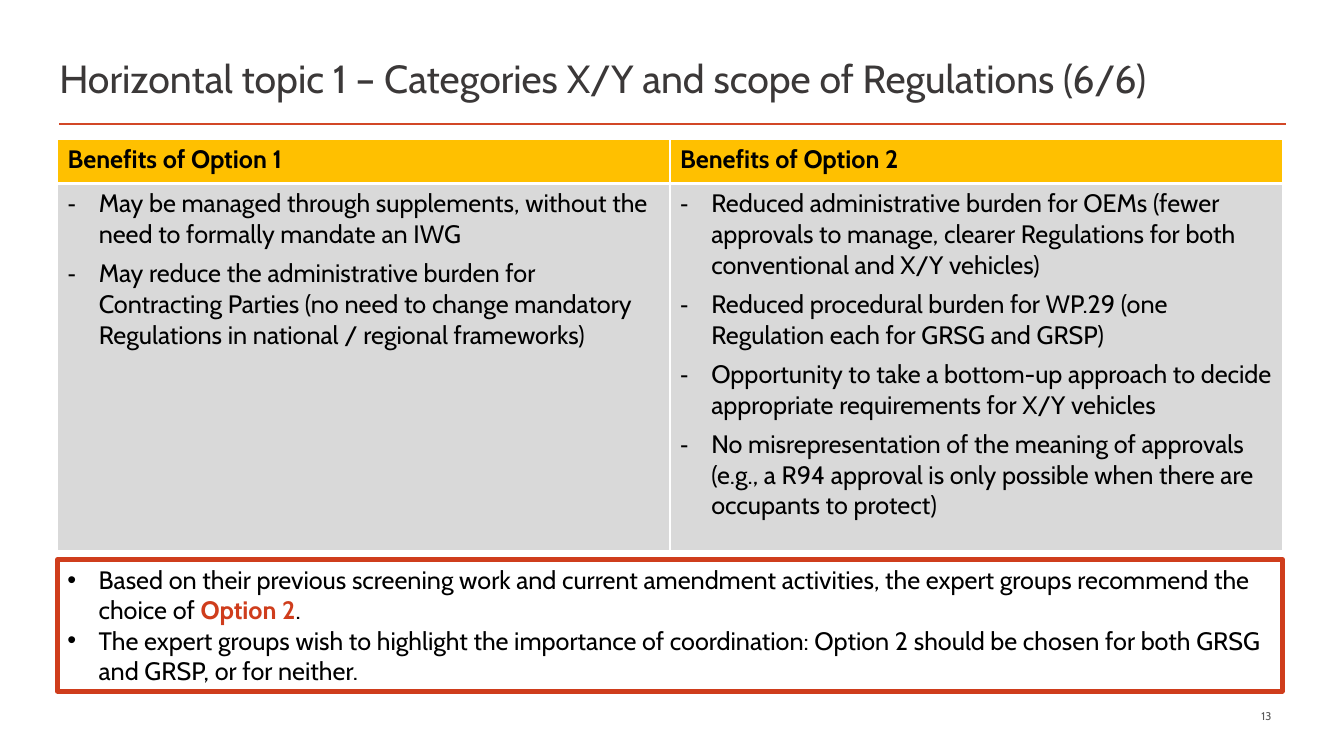
"""Build the slide that weighs the benefits of two options for Regulations."""
from dataclasses import dataclass
from typing import Any

from lxml import etree
from pptx import Presentation
from pptx import util as u
from pptx.dml.color import RGBColor
from pptx.enum import shapes, text
from pptx.oxml import ns

PX = u.Inches(1) // 100


@dataclass(frozen=True)
class Theme:
    """Colours, font and type sizes."""
    font: str = "Cabin"
    title: str = "3B3838"
    ink: str = "000000"
    muted: str = "595959"
    rule: str = "D24726"
    accent: str = "CF3D1C"
    head: str = "FFC000"
    body: str = "D9D9D9"
    white: str = "FFFFFF"
    big: int = 28
    mid: int = 18
    small: int = 8


@dataclass(frozen=True)
class Box:
    """A place on the slide in px."""
    left: int
    top: int
    width: int
    height: int

    def emu(self) -> tuple[int, ...]:
        """Return the four lengths in EMU."""
        return tuple(n * PX for n in (self.left, self.top, self.width, self.height))


@dataclass(frozen=True)
class Label:
    """A single line of text in its own box."""
    words: str
    box: Box
    size: int
    color: str
    align: Any
    inset: int


@dataclass(frozen=True)
class Option:
    """One table column: heading and benefits."""
    head: str
    items: tuple[str, ...]


THEME = Theme()
LABELS = (
    Label("Horizontal topic 1 – Categories X/Y and scope of Regulations (6/6)",
          Box(49, 47, 1226, 61), THEME.big, THEME.title, text.PP_ALIGN.LEFT, 5),
    Label("13", Box(913, 703, 358, 15), THEME.small, THEME.muted, text.PP_ALIGN.RIGHT, 0),
)
OPTIONS = (
    Option("Benefits of Option 1", (
        "May be managed through supplements, without the need to formally mandate an IWG",
        "May reduce the administrative burden for Contracting Parties (no need to change "
        "mandatory Regulations in national / regional frameworks)",
    )),
    Option("Benefits of Option 2", (
        "Reduced administrative burden for OEMs (fewer approvals to manage, clearer "
        "Regulations for both conventional and X/Y vehicles)",
        "Reduced procedural burden for WP.29 (one Regulation each for GRSG and GRSP)",
        "Opportunity to take a bottom-up approach to decide appropriate requirements "
        "for X/Y vehicles",
        "No misrepresentation of the meaning of approvals (e.g., a R94 approval is only "
        "possible when there are occupants to protect)",
    )),
)
ADVICE = (
    ("Based on their previous screening work and current amendment activities, "
     "the expert groups recommend the choice of ", "Option 2", "."),
    ("The expert groups wish to highlight the importance of coordination: Option 2 "
     "should be chosen for both GRSG and GRSP, or for neither.",),
)
GRID = Box(57, 138, 1215, 408)
ROWS = (44, 364)
PANEL = Box(57, 555, 1215, 131)


def paint(code: str) -> RGBColor:
    """Turn a hex code into a colour."""
    return RGBColor.from_string(code)


def style(font: Any, size: int, color: str, bold: bool = False) -> None:
    """Set face, size, colour and weight."""
    font.name, font.size, font.bold = THEME.font, u.Pt(size), bold
    font.color.rgb = paint(color)


def bullet(para: Any, mark: str) -> None:
    """Give a paragraph a hanging mark."""
    props = para._p.get_or_add_pPr()
    props.set("marL", str(31 * PX))
    props.set("indent", str(-31 * PX))
    etree.SubElement(props, ns.qn("a:buFont")).set("typeface", "Arial")
    etree.SubElement(props, ns.qn("a:buChar")).set("char", mark)


def fill_list(frame: Any, items: tuple[tuple[str, ...], ...], mark: str, gap: int) -> None:
    """Write bulleted items, with every second part in the accent."""
    for row, parts in enumerate(items):
        para = frame.add_paragraph() if row else frame.paragraphs[0]
        para.alignment = text.PP_ALIGN.LEFT
        bullet(para, mark)
        para.space_after = u.Pt(gap)
        style(para.font, THEME.mid, THEME.ink)
        for spot, part in enumerate(parts):
            run = para.add_run()
            run.text = part
            if spot % 2:
                run.font.bold = True
                run.font.color.rgb = paint(THEME.accent)


def add_label(slide: Any, label: Label) -> None:
    """Draw a line of text."""
    frame = slide.shapes.add_textbox(*label.box.emu()).text_frame
    frame.word_wrap = True
    frame.vertical_anchor = text.MSO_ANCHOR.MIDDLE
    frame.margin_top = frame.margin_bottom = label.inset * PX
    para = frame.paragraphs[0]
    para.text, para.alignment = label.words, label.align
    style(para.font, label.size, label.color)


def add_rule(slide: Any) -> None:
    """Draw the line below the title."""
    rule = slide.shapes.add_connector(
        shapes.MSO_CONNECTOR.STRAIGHT, 59 * PX, 123 * PX, 1275 * PX, 123 * PX)
    rule.line.color.rgb = paint(THEME.rule)
    rule.line.width = u.Pt(2)
    etree.SubElement(rule._element.spPr, ns.qn("a:effectLst"))


def dress(cell: Any, color: str, top: int, low: int) -> None:
    """Set the borders and fill of a cell."""
    props = cell._tc.get_or_add_tcPr()
    for side, width in zip("LRTB", (1, 1, top, low)):
        line = etree.SubElement(props, ns.qn(f"a:ln{side}"), w=str(u.Pt(width)))
        solid = etree.SubElement(line, ns.qn("a:solidFill"))
        etree.SubElement(solid, ns.qn("a:srgbClr"), val=THEME.white)
    cell.fill.solid()
    cell.fill.fore_color.rgb = paint(color)


def add_grid(slide: Any) -> None:
    """Draw the table of benefits."""
    table = slide.shapes.add_table(len(ROWS), len(OPTIONS), *GRID.emu()).table
    for row, height in zip(table.rows, ROWS):
        row.height = height * PX
    for col, option in enumerate(OPTIONS):
        head, body = table.cell(0, col), table.cell(1, col)
        dress(head, THEME.head, 1, 3)
        dress(body, THEME.body, 3, 1)
        para = head.text_frame.paragraphs[0]
        para.text = option.head
        style(para.font, THEME.mid, THEME.ink, True)
        fill_list(body.text_frame, tuple((item,) for item in option.items), "-", 6)


def add_panel(slide: Any) -> None:
    """Draw the framed advice."""
    panel = slide.shapes.add_shape(shapes.MSO_SHAPE.RECTANGLE, *PANEL.emu())
    panel.shadow.inherit = False
    panel.fill.background()
    panel.line.color.rgb = paint(THEME.accent)
    panel.line.width = u.Pt(3)
    frame = panel.text_frame
    frame.word_wrap = True
    frame.vertical_anchor = text.MSO_ANCHOR.TOP
    fill_list(frame, ADVICE, "•", 0)


def main() -> None:
    """Build and save the slide."""
    deck = Presentation()
    deck.slide_width, deck.slide_height = u.Inches(13.33), u.Inches(7.5)
    slide = deck.slides.add_slide(deck.slide_layouts[6])
    add_rule(slide)
    for label in LABELS:
        add_label(slide, label)
    add_grid(slide)
    add_panel(slide)
    deck.save("out.pptx")


if __name__ == "__main__":
    main()
